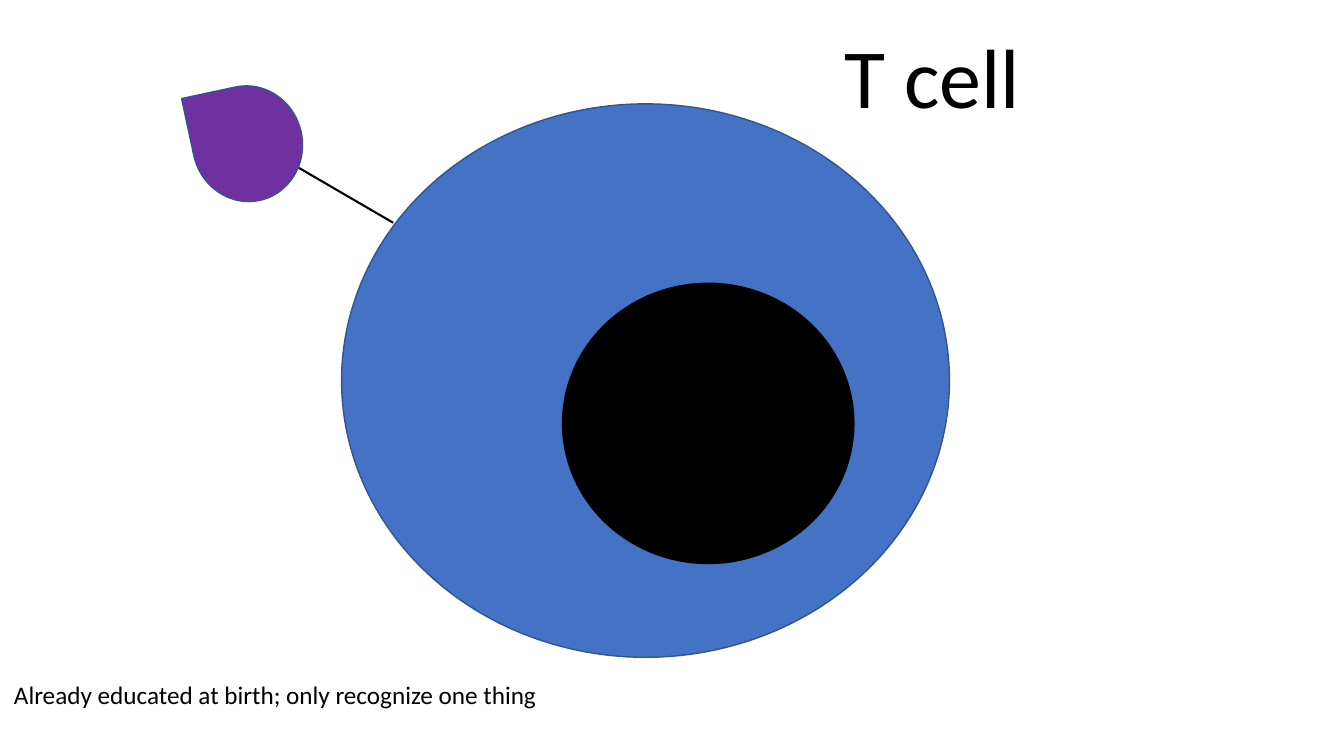
from dataclasses import dataclass

from lxml.etree import SubElement
from pptx import Presentation
from pptx.dml.color import RGBColor
from pptx.enum.shapes import MSO_CONNECTOR, MSO_SHAPE
from pptx.enum.text import MSO_AUTO_SIZE
from pptx.oxml.ns import qn
from pptx.util import Pt


@dataclass(frozen=True)
class Theme:
    """Colours, font and type sizes of the slide."""
    cell: RGBColor = RGBColor(0x44, 0x72, 0xC4)
    outline: RGBColor = RGBColor(0x32, 0x54, 0x91)
    receptor: RGBColor = RGBColor(0x70, 0x30, 0xA0)
    ink: RGBColor = RGBColor(0, 0, 0)
    font: str = "Calibri"
    title_size: int = 60
    caption_size: int = 18


THEME = Theme()


def add_body(slide, kind, box, fill, outline, rotation=0):
    """Draw one filled, outlined part of the cell."""
    body = slide.shapes.add_shape(kind, *map(Pt, box))
    body.shadow.inherit = False
    body.fill.solid()
    body.fill.fore_color.rgb = fill
    body.line.color.rgb = outline
    body.line.width = Pt(1)
    body.rotation = rotation


def add_stem(slide, start, end):
    """Draw the line that joins the receptor to the cell."""
    stem = slide.shapes.add_connector(
        MSO_CONNECTOR.STRAIGHT, *map(Pt, (*start, *end)))
    stem.line.color.rgb = THEME.ink
    stem.line.width = Pt(1.5)
    SubElement(stem.element.spPr, qn("a:effectLst"))


def add_label(slide, box, wording, size):
    """Write one line of text."""
    frame = slide.shapes.add_textbox(*map(Pt, box)).text_frame
    frame.word_wrap = True
    frame.auto_size = MSO_AUTO_SIZE.SHAPE_TO_FIT_TEXT
    label = frame.paragraphs[0]
    label.text = wording
    label.font.name = THEME.font
    label.font.size = Pt(size)
    label.font.color.rgb = THEME.ink


def main():
    """Build and save the T cell slide."""
    deck = Presentation()
    deck.slide_width, deck.slide_height = Pt(960), Pt(540)
    slide = deck.slides.add_slide(deck.slide_layouts[6])
    add_body(slide, MSO_SHAPE.OVAL, (244, 74.2, 434.2, 395.3),
             THEME.cell, THEME.outline)
    add_stem(slide, (203, 113.8), (280.8, 159.1))
    add_body(slide, MSO_SHAPE.OVAL, (401.8, 202.3, 208.1, 200.2),
             THEME.ink, THEME.ink)
    add_label(slide, (2.9, 481.7, 399.6, 29),
              "Already educated at birth; only recognize one thing",
              THEME.caption_size)
    add_label(slide, (596.2, 13.7, 173.5, 80), "T cell", THEME.title_size)
    add_body(slide, MSO_SHAPE.TEAR, (135.4, 63.4, 82.8, 78.5),
             THEME.receptor, THEME.outline, rotation=257.9)
    deck.save("out.pptx")


if __name__ == "__main__":
    main()
